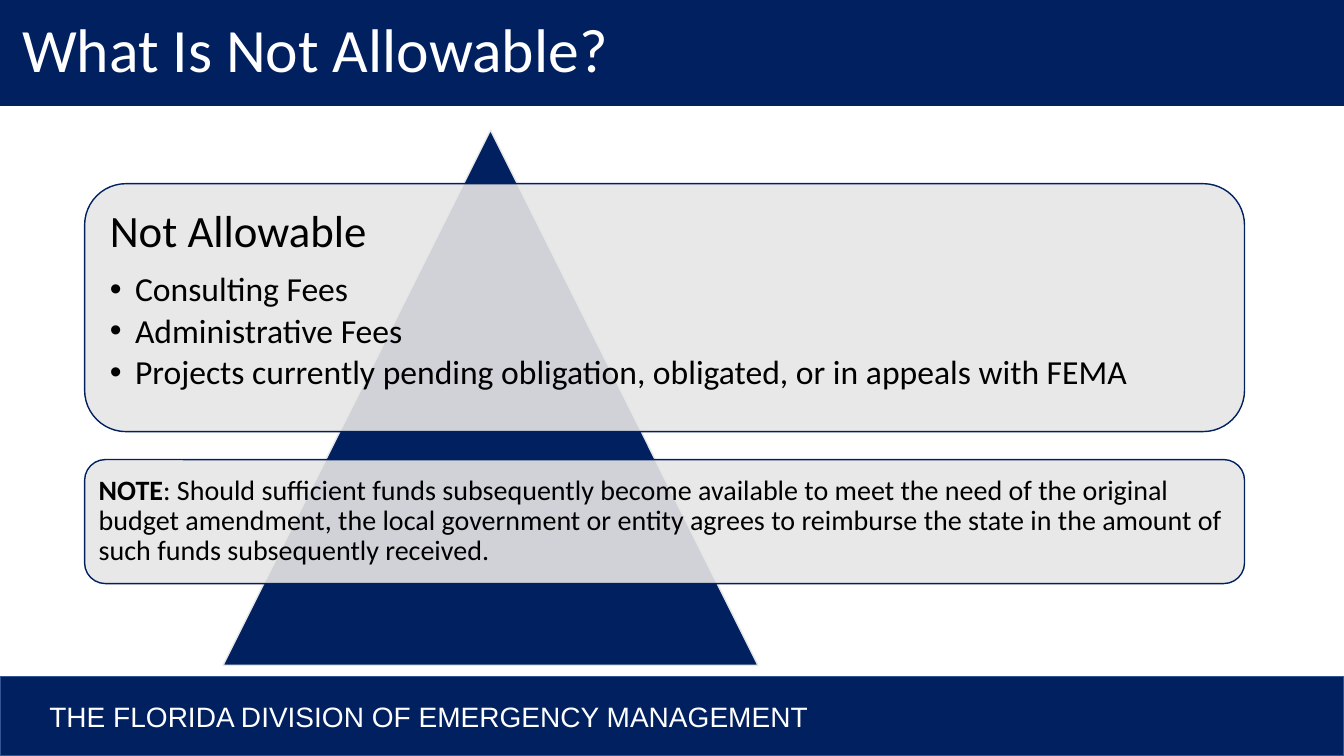
from pptx import Presentation
from pptx.dml.color import RGBColor
from pptx.enum.shapes import MSO_SHAPE
from pptx.enum.text import MSO_ANCHOR, PP_ALIGN
from pptx.oxml.ns import qn
from pptx.util import Emu, Inches, Pt
from lxml.etree import SubElement

COLORS = {"navy": "002060", "edge": "325491", "grey": "E7E6E6",
          "white": "FFFFFF", "black": "000000"}
WIDTH, HEIGHT = Inches(13.33), Inches(7.5)
CARD_LEFT, CARD_WIDTH = 0.063, 0.863  # shares of the slide width
FEES = ["Consulting Fees", "Administrative Fees",
        "Projects currently pending obligation, obligated, or in appeals with FEMA"]
NOTE = (": Should sufficient funds subsequently become available to meet the need of the "
        "original budget amendment, the local government or entity agrees to reimburse the "
        "state in the amount of such funds subsequently received.")


def rgb(name):
    return RGBColor.from_string(COLORS[name])


def add_block(s, kind, x, y, w, h, fill, line=None, opacity=None):
    """Add a preset shape placed by shares of the slide's size."""
    sp = s.shapes.add_shape(kind, Emu(int(x * WIDTH)), Emu(int(y * HEIGHT)),
                            Emu(int(w * WIDTH)), Emu(int(h * HEIGHT)))
    sp.shadow.inherit = False
    sp.fill.solid()
    sp.fill.fore_color.rgb = rgb(fill)
    if opacity:
        color = sp.fill._xPr.find(qn("a:solidFill"))[0]
        SubElement(color, qn("a:alpha")).set("val", str(opacity * 1000))
    if line:
        sp.line.color.rgb = rgb(line)
        sp.line.width = Pt(1)
    else:
        sp.line.fill.background()
    return sp


def set_frame(sp, anchor, left, other):
    tf = sp.text_frame
    tf.word_wrap = True
    tf.vertical_anchor = anchor
    tf.margin_left = Inches(left)
    tf.margin_right = tf.margin_top = tf.margin_bottom = Inches(other)
    return tf


def add_text(p, text, size, color="black", font="Calibri", bold=False):
    r = p.add_run()
    r.text = text
    r.font.size = Pt(size)
    r.font.name = font
    r.font.bold = bold
    r.font.color.rgb = rgb(color)


def format_paragraph(p, spacing=0.9, after=0, bullet=False):
    p.alignment = PP_ALIGN.LEFT
    p.line_spacing = spacing
    p.space_after = Pt(after)
    if bullet:
        pPr = p._p.get_or_add_pPr()
        pPr.set("marL", str(Inches(0.25)))
        pPr.set("indent", str(-Inches(0.25)))
        SubElement(pPr, qn("a:buFont")).set("typeface", "Arial")
        SubElement(pPr, qn("a:buChar")).set("char", "•")


def add_band(s, y, h, text, size, font, left, spacing, line=None):
    """Add a full-width navy bar with one line of white text."""
    sp = add_block(s, MSO_SHAPE.RECTANGLE, 0, y, 1, h, "navy", line)
    p = set_frame(sp, MSO_ANCHOR.MIDDLE, left, 0.05).paragraphs[0]
    format_paragraph(p, spacing)
    add_text(p, text, size, "white", font)


def add_card(s, y, h, anchor, inset):
    sp = add_block(s, MSO_SHAPE.ROUNDED_RECTANGLE, CARD_LEFT, y, CARD_WIDTH, h,
                   "grey", "navy", opacity=90)
    return set_frame(sp, anchor, inset, inset)


def main():
    prs = Presentation()
    prs.slide_width, prs.slide_height = WIDTH, HEIGHT
    s = prs.slides.add_slide(prs.slide_layouts[6])

    add_band(s, 0.895, 0.105, "THE FLORIDA DIVISION OF EMERGENCY MANAGEMENT",
             20, "Arial", 0.49, 1.0, "edge")
    add_band(s, 0, 0.14, "What Is Not Allowable?", 44, "Calibri", 0.22, 0.9)
    add_block(s, MSO_SHAPE.ISOSCELES_TRIANGLE, 0.166, 0.172, 0.398, 0.708, "navy", "grey")

    tf = add_card(s, 0.243, 0.328, MSO_ANCHOR.TOP, 0.13)
    p = tf.paragraphs[0]
    format_paragraph(p, after=11)
    add_text(p, "Not Allowable", 32)
    for fee in FEES:
        p = tf.add_paragraph()
        format_paragraph(p, after=3.6, bullet=True)
        add_text(p, fee, 24)

    p = add_card(s, 0.608, 0.164, MSO_ANCHOR.MIDDLE, 0.08).paragraphs[0]
    format_paragraph(p)
    add_text(p, "NOTE", 20, bold=True)
    add_text(p, NOTE, 20)

    prs.save("out.pptx")


if __name__ == "__main__":
    main()
